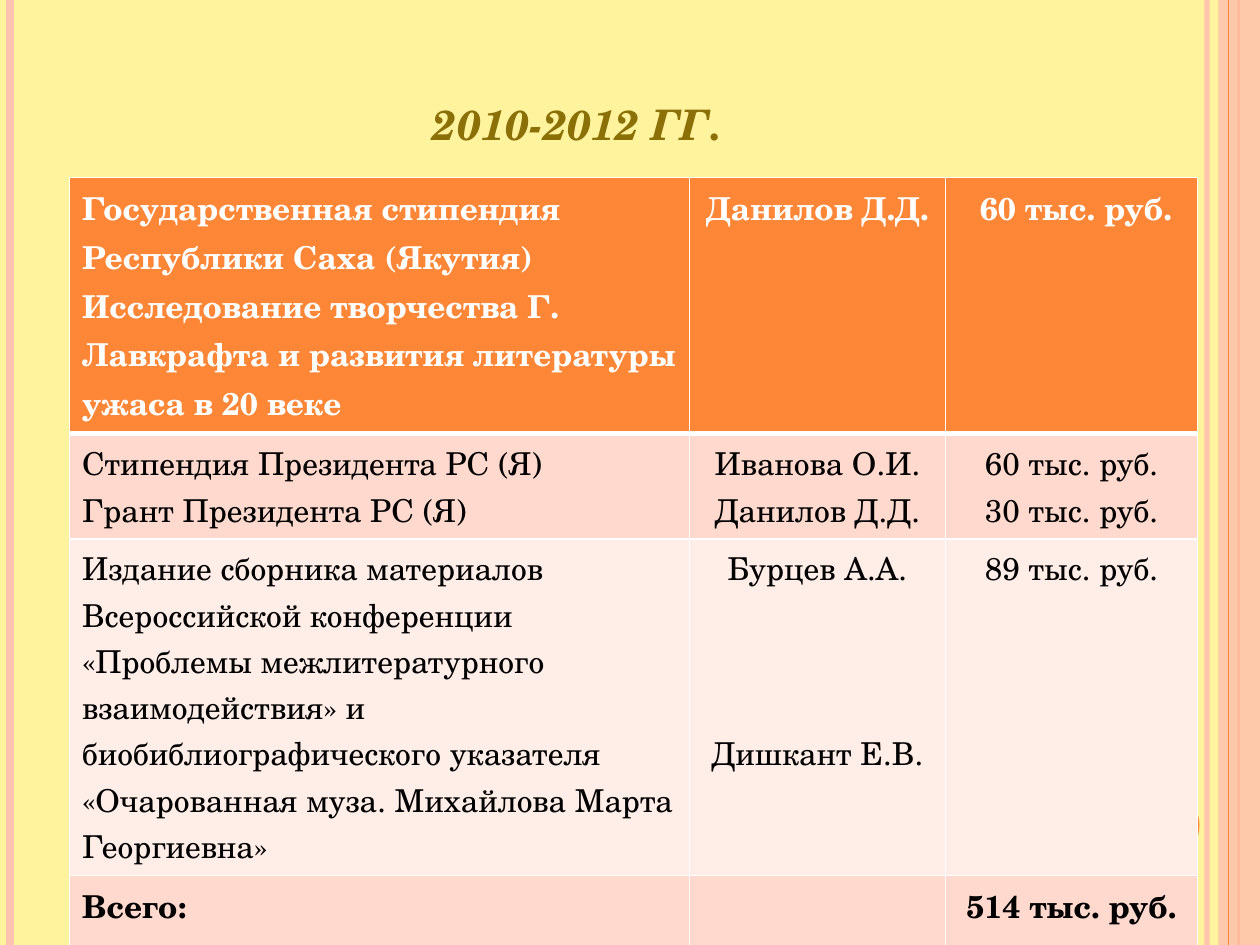
from pptx import Presentation
from pptx.dml.color import RGBColor
from pptx.enum.shapes import MSO_CONNECTOR, MSO_SHAPE
from pptx.enum.text import MSO_ANCHOR, PP_ALIGN
from pptx.oxml.ns import qn
from pptx.util import Cm, Pt
from lxml.etree import SubElement

FONT = "TeX Gyre Schola"
ORANGE, PEACH, WHITE, BLACK = "FE8637", "FEC3AE", "FFFFFF", "000000"
BAND_DARK, BAND_LIGHT = "FFD9CE", "FFEDE8"
WIDTH, HEIGHT = 25.4, 19.05

COLUMN_WIDTHS = [12.5, 5.16, 5.08]
GRANTS = [
    (5.16, ORANGE, WHITE, True, [
        ["Государственная стипендия Республики Саха (Якутия)",
         "Исследование творчества Г. Лавкрафта и развития литературы ужаса в 20 веке"],
        ["Данилов Д.Д."], [" 60 тыс. руб."]]),
    (2.11, BAND_DARK, BLACK, False, [
        ["Стипендия Президента РС (Я)", "Грант Президента РС (Я)"],
        ["Иванова О.И.", "Данилов Д.Д."], ["60 тыс. руб.", "30 тыс. руб."]]),
    (6.78, BAND_LIGHT, BLACK, False, [
        ["Издание сборника материалов Всероссийской конференции «Проблемы "
         "межлитературного взаимодействия» и биобиблиографического указателя "
         "«Очарованная муза. Михайлова Марта Георгиевна»"],
        ["Бурцев А.А.", "Дишкант Е.В."], ["89 тыс. руб."]]),
    (1.42, BAND_DARK, BLACK, True, [["Всего:"], [], ["514 тыс. руб."]]),
]
SECOND_AUTHOR_GAP = {(2, 1): Pt(79)}


def color(value):
    return RGBColor.from_string(value)


def set_alpha(color_format_parent, percent):
    fill_color = next(color_format_parent.iter(qn("a:srgbClr")))
    SubElement(fill_color, qn("a:alpha")).set("val", str(percent * 1000))


def format_runs(paragraph, size, text_color, bold, italic=False):
    for run in paragraph.runs:
        run.font.name = FONT
        run.font.size = Pt(size)
        run.font.bold = bold
        run.font.italic = italic
        run.font.color.rgb = color(text_color)


def add_vertical_line(slide, x, height, line_color, width, alpha=100):
    line = slide.shapes.add_connector(MSO_CONNECTOR.STRAIGHT, Cm(x), 0, Cm(x), Cm(height))
    line.line.color.rgb = color(line_color)
    line.line.width = Pt(width)
    properties = line._element.spPr
    if alpha < 100:
        set_alpha(properties, alpha)
    SubElement(properties, qn("a:effectLst"))


def add_plain_shape(slide, kind, left, top, width, height, fill_color, alpha=100):
    shape = slide.shapes.add_shape(kind, Cm(left), Cm(top), Cm(width), Cm(height))
    shape.shadow.inherit = False
    shape.fill.solid()
    shape.fill.fore_color.rgb = color(fill_color)
    shape.line.fill.background()
    if alpha < 100:
        set_alpha(shape._element.spPr, alpha)


def add_side_bands(slide, width, height):
    add_vertical_line(slide, width - 1.07, height, PEACH, 3, 93)
    add_vertical_line(slide, 0.2, height, PEACH, 4.5)
    add_vertical_line(slide, width - 0.43, height, ORANGE, 1.5)
    add_plain_shape(slide, MSO_SHAPE.RECTANGLE, width - 0.84, 0, 0.84, height, PEACH, 87)
    add_vertical_line(slide, width - 0.63, height, ORANGE, 0.75)
    add_plain_shape(slide, MSO_SHAPE.OVAL, width - 2.74, height - 3.17, 1.52, 1.52, ORANGE)


def place_title(slide, left, top, width, height):
    title = slide.shapes.title
    title.left, title.top, title.width, title.height = Cm(left), Cm(top), Cm(width), Cm(height)
    title.text_frame.text = "2010-2012 гг."
    title.text_frame.vertical_anchor = MSO_ANCHOR.BOTTOM
    paragraph = title.text_frame.paragraphs[0]
    paragraph.alignment = PP_ALIGN.CENTER
    format_runs(paragraph, 30, "8A7007", True, True)
    paragraph.runs[0].font._element.set("cap", "small")


def set_cell_borders(cell, bottom_width):
    properties = cell._tc.get_or_add_tcPr()
    widths = {"a:lnL": 1, "a:lnR": 1, "a:lnT": 1, "a:lnB": bottom_width}
    for position, (tag, width) in enumerate(widths.items()):
        border = SubElement(properties, qn(tag))
        border.set("w", str(Pt(width)))
        fill = SubElement(border, qn("a:solidFill"))
        SubElement(fill, qn("a:srgbClr")).set("val", WHITE)
        properties.insert(position, border)


def add_grants_table(slide, left, top):
    width, height = sum(COLUMN_WIDTHS), sum(row[0] for row in GRANTS)
    table = slide.shapes.add_table(len(GRANTS), len(COLUMN_WIDTHS),
                                   Cm(left), Cm(top), Cm(width), Cm(height)).table
    for column, column_width in zip(table.columns, COLUMN_WIDTHS):
        column.width = Cm(column_width)
    for r, (row_height, fill_color, text_color, bold, texts) in enumerate(GRANTS):
        table.rows[r].height = Cm(row_height)
        for c, lines in enumerate(texts):
            cell = table.cell(r, c)
            cell.fill.solid()
            cell.fill.fore_color.rgb = color(fill_color)
            set_cell_borders(cell, 3 if r == 0 else 1)
            cell.text_frame.text = "\n".join(lines)
            for paragraph in cell.text_frame.paragraphs:
                paragraph.alignment = PP_ALIGN.CENTER if c else PP_ALIGN.LEFT
                format_runs(paragraph, 18, text_color, bold)
            if (r, c) in SECOND_AUTHOR_GAP:
                cell.text_frame.paragraphs[-1].space_before = SECOND_AUTHOR_GAP[r, c]


def main():
    presentation = Presentation()
    presentation.slide_width, presentation.slide_height = Cm(WIDTH), Cm(HEIGHT)
    slide = presentation.slides.add_slide(presentation.slide_layouts[5])
    slide.background.fill.solid()
    slide.background.fill.fore_color.rgb = color("FFF39D")
    add_side_bands(slide, WIDTH, HEIGHT)
    place_title(slide, 1.27, 0.76, 20.75, 2.41)
    add_grants_table(slide, 1.4, 3.58)
    presentation.save("out.pptx")


if __name__ == "__main__":
    main()
